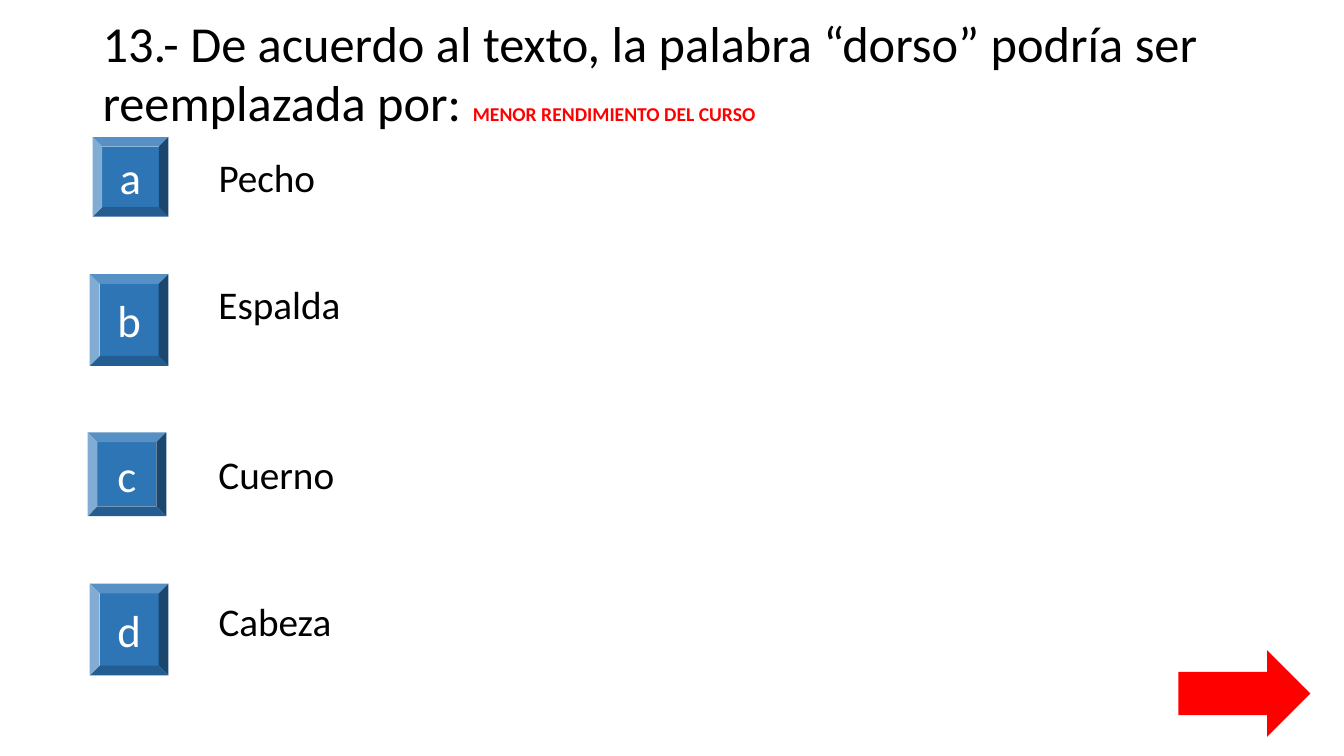
from pptx import Presentation
from pptx.dml.color import RGBColor
from pptx.enum.shapes import MSO_SHAPE as Shape
from pptx.enum.text import MSO_ANCHOR as Anchor, PP_ALIGN as Align
from pptx.util import Pt

BLACK = RGBColor(0x00, 0x00, 0x00)
WHITE = RGBColor(0xFF, 0xFF, 0xFF)
RED = RGBColor(0xFF, 0x00, 0x00)
BLUE = RGBColor(0x2E, 0x75, 0xB6)
FONT = "Calibri"

ANSWER_LEFT, ANSWER_HEIGHT = 149, 41

# letter, button (left, top, width, height), answer, answer top, answer width
OPTIONS = [
    ("a", (66.2, 97.9, 54, 56.9), "Pecho", 105.8, 646.6),
    ("b", (64.1, 195.8, 56.2, 65.5), "Espalda", 196.6, 725),
    ("c", (62.6, 308.9, 56.2, 59.8), "Cuerno", 318.2, 705.6),
    ("d", (64.1, 416.9, 56.2, 65.5), "Cabeza", 423.4, 692.6),
]


def add_run(paragraph, text, size, color=BLACK, bold=False):
    run = paragraph.add_run()
    run.text = text
    run.font.name = FONT
    run.font.size = Pt(size)
    run.font.color.rgb = color
    run.font.bold = bold


def add_text_box(slide, box, anchor=Anchor.TOP):
    frame = slide.shapes.add_textbox(*map(Pt, box)).text_frame
    frame.word_wrap = True
    frame.vertical_anchor = anchor
    return frame.paragraphs[0]


def add_filled_shape(slide, kind, box, color):
    shape = slide.shapes.add_shape(kind, *map(Pt, box))
    shape.shadow.inherit = False
    shape.fill.solid()
    shape.fill.fore_color.rgb = color
    shape.line.fill.background()
    return shape


def add_button(slide, letter, box):
    frame = add_filled_shape(slide, Shape.BEVEL, box, BLUE).text_frame
    frame.vertical_anchor = Anchor.MIDDLE
    paragraph = frame.paragraphs[0]
    paragraph.alignment = Align.CENTER
    add_run(paragraph, letter, 32, WHITE)


def main():
    presentation = Presentation()
    presentation.slide_width, presentation.slide_height = Pt(960), Pt(540)
    slide = presentation.slides.add_slide(presentation.slide_layouts[6])

    # Question, whose last line is as tall as its 40 pt closing space
    question = add_text_box(slide, (66.2, 28.8, 828, 51.8), Anchor.MIDDLE)
    question.line_spacing = 0.9
    add_run(question, "13.- De acuerdo al texto, la palabra “dorso” podría ser reemplazada por: ", 36)
    add_run(question, "MENOR RENDIMIENTO DEL CURSO", 14, RED, bold=True)
    add_run(question, " ", 40)

    # Answer options
    for letter, button_box, answer, top, width in OPTIONS:
        add_button(slide, letter, button_box)
        paragraph = add_text_box(slide, (ANSWER_LEFT, top, width, ANSWER_HEIGHT))
        add_run(paragraph, answer, 28)

    # Arrow to the next question
    add_filled_shape(slide, Shape.RIGHT_ARROW, (841.7, 464.4, 94.3, 61.9), RED)

    presentation.save("out.pptx")


if __name__ == "__main__":
    main()
